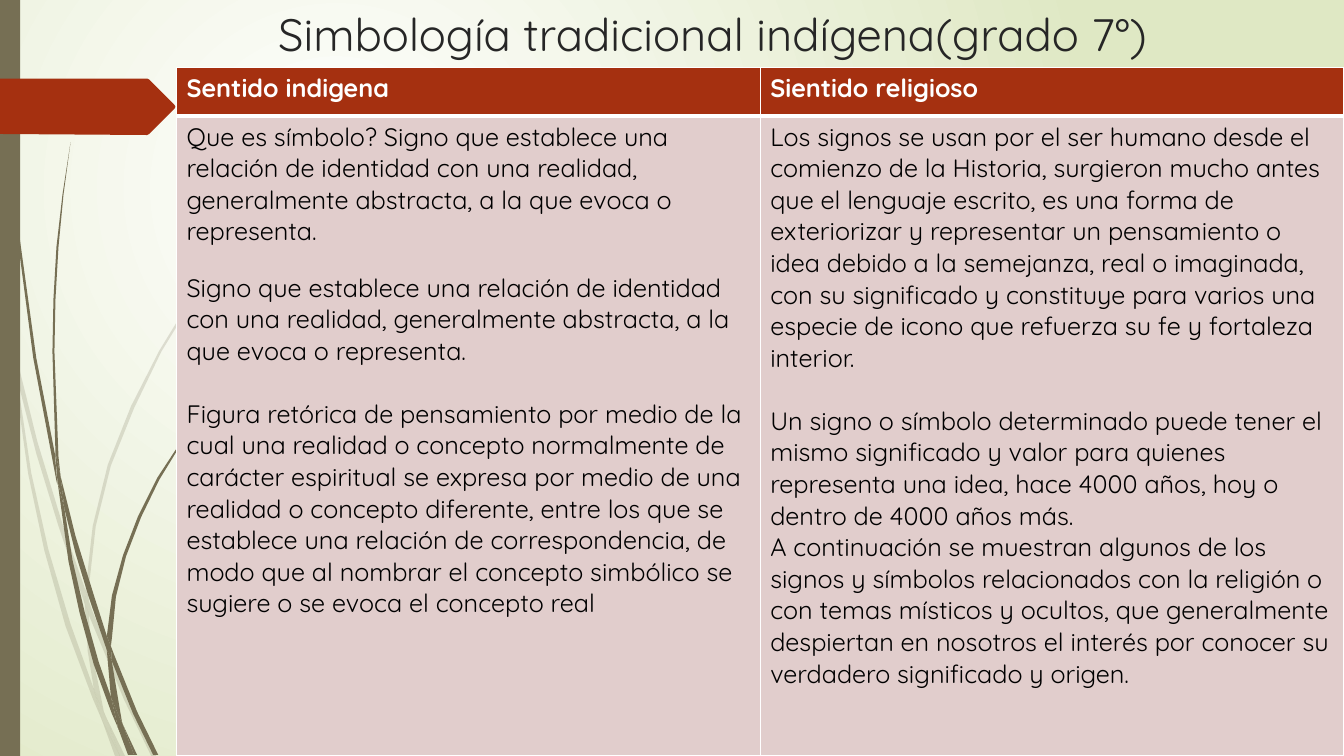
import pptx
import pptx.dml.color
import pptx.enum.shapes
import pptx.enum.text
import pptx.oxml
import pptx.oxml.ns
import pptx.util
from dataclasses import dataclass
from lxml import etree
from pptx.util import Inches


@dataclass(frozen=True)
class Theme:
    font: str = "Quicksand"
    title_size: float = 32.4
    body_size: float = 18
    white: str = "FFFFFF"
    black: str = "000000"
    title_color: str = "262626"
    background_edge: str = "DFE8C4"
    grass: str = "766F54"
    accent: str = "A53010"
    cell: str = "E1CDCC"


# Outlines in inches, one list of corner points per piece of a blade.
PALE_GRASS = [
    [(0.11, 3.5), (0.09, 3.22), (0, 2.82), (0, 2.99), (0.1, 3.44)],
    [(0.58, 5.22), (0.84, 5.99), (0.85, 5.86), (0.62, 5.2), (0.37, 4.38), (0.14, 3.45),
     (0.17, 3.76), (0.36, 4.5)],
    [(0.92, 6.07), (0.88, 5.96), (0.88, 6.1), (1.23, 6.94), (1.5, 7.5), (1.55, 7.5), (1.27, 6.92)],
    [(1.19, 7.5), (1.24, 7.5), (1.05, 7.11)],
    [(0.93, 6.83), (0.7, 6.19), (0.48, 5.45), (0.31, 4.69), (0.17, 3.76), (0.11, 3.5),
     (0.28, 4.7), (0.44, 5.46), (0.65, 6.21), (0.92, 6.93), (1.01, 7.14), (0.99, 7.07)],
    [(0.84, 5.99), (0.87, 6.46), (0.93, 6.83), (0.96, 6.92), (1.05, 7.11), (1.03, 7.06),
     (0.91, 6.46), (0.88, 6.1), (0.88, 6.08)],
    [(0.88, 5.84), (0.95, 5.22), (1.1, 4.62), (1.33, 4.05), (1.6, 3.49), (1.93, 2.95),
     (2.29, 2.45), (2.68, 1.98), (2.9, 1.75), (3.12, 1.54), (3.12, 1.53), (2.89, 1.75),
     (2.68, 1.97), (2.28, 2.44), (1.91, 2.94), (1.58, 3.48), (1.3, 4.03), (1.07, 4.61),
     (0.92, 5.22), (0.85, 5.84), (0.85, 5.86), (0.88, 5.96)],
    [(1.01, 7.14), (1.14, 7.5), (1.19, 7.5)],
    [(0.88, 6.08), (0.88, 6.1), (0.88, 5.96), (0.85, 5.86), (0.84, 5.99)],
    [(0.96, 6.92), (0.93, 6.83), (0.99, 7.07), (1.01, 7.14), (1.19, 7.5), (1.05, 7.11)],
]
DARK_GRASS = [
    [(0.07, 1.1), (0.17, 2.33), (0.33, 3.55), (0.56, 4.77), (0.57, 4.81), (0.55, 4.57),
     (0.55, 4.53), (0.36, 3.55), (0.19, 2.32), (0.08, 1.09), (0.05, 0.48), (0.04, 0),
     (0.03, 0), (0.04, 0.48)],
    [(0.88, 5.92), (1.06, 6.45), (1.06, 6.31), (0.93, 5.9), (0.75, 5.32), (0.6, 4.72),
     (0.64, 5.05), (0.75, 5.49)],
    [(1.13, 6.49), (1.1, 6.41), (1.11, 6.56), (1.32, 7.08), (1.52, 7.49), (1.57, 7.49),
     (1.36, 7.06)],
    [(1.1, 6.91), (0.98, 6.57), (0.84, 6.07), (0.72, 5.56), (0.64, 5.05), (0.57, 4.77),
     (0.68, 5.57), (0.79, 6.08), (0.93, 6.59), (1.11, 7.08), (1.17, 7.22), (1.16, 7.17)],
    [(0.6, 4.72), (0.58, 4.53), (0.54, 3.49), (0.55, 2.97), (0.58, 2.45), (0.63, 1.93),
     (0.7, 1.41), (0.62, 1.93), (0.56, 2.45), (0.53, 2.97), (0.52, 3.49), (0.55, 4.49)],
    [(1.33, 7.49), (1.36, 7.49), (1.22, 7.19)],
    [(0.57, 4.77), (0.64, 5.05), (0.6, 4.72), (0.55, 4.49), (0.55, 4.53)],
    [(1.11, 6.33), (1.15, 5.92), (1.25, 5.52), (1.4, 5.13), (1.58, 4.76), (1.8, 4.4),
     (2.05, 4.06), (2.31, 3.74), (2.45, 3.59), (2.61, 3.44), (2.6, 3.44), (2.45, 3.58),
     (2.31, 3.73), (2.04, 4.05), (1.79, 4.39), (1.56, 4.74), (1.37, 5.12), (1.22, 5.51),
     (1.11, 5.91), (1.06, 6.31), (1.1, 6.41)],
    [(1.17, 7.22), (1.27, 7.49), (1.31, 7.49)],
    [(1.06, 6.45), (1.1, 6.91), (1.16, 7.06), (1.22, 7.19), (1.21, 7.16), (1.11, 6.56),
     (1.09, 6.51)],
    [(1.06, 6.45), (1.09, 6.51), (1.11, 6.56), (1.1, 6.41), (1.06, 6.31)],
    [(1.16, 7.06), (1.1, 6.91), (1.16, 7.17), (1.17, 7.22), (1.3, 7.49), (1.33, 7.49),
     (1.22, 7.19)],
]
RED_ARROW = [(0, 0.78), (1.46, 0.78), (1.48, 0.79), (1.73, 1.04), (1.74, 1.06), (1.73, 1.08),
             (1.48, 1.33), (1.46, 1.34), (0, 1.33)]

# Each column: heading, then body paragraphs with the space before them in points.
COLUMNS = [
    ("Sentido indigena", [
        ("Que es símbolo? Signo que establece una relación de identidad con una realidad, "
         "generalmente abstracta, a la que evoca o representa.", 0),
        ("Signo que establece una relación de identidad con una realidad, generalmente "
         "abstracta, a la que evoca o representa.", 17.5),
        ("Figura retórica de pensamiento por medio de la cual una realidad o concepto "
         "normalmente de carácter espiritual se expresa por medio de una realidad o concepto "
         "diferente, entre los que se establece una relación de correspondencia, de modo que al "
         "nombrar el concepto simbólico se sugiere o se evoca el concepto real", 22.5),
    ]),
    ("Sientido religioso", [
        ("Los signos se usan por el ser humano desde el comienzo de la Historia, surgieron mucho "
         "antes que el lenguaje escrito, es una forma de exteriorizar y representar un "
         "pensamiento o idea debido a la semejanza, real o imaginada, con su significado y "
         "constituye para varios una especie de icono que refuerza su fe y fortaleza interior.", 0),
        ("Un signo o símbolo determinado puede tener el mismo significado y valor para quienes "
         "representa una idea, hace 4000 años, hoy o dentro de 4000 años más.", 22.5),
        ("A continuación se muestran algunos de los signos y símbolos relacionados con la "
         "religión o con temas místicos y ocultos, que generalmente despiertan en nosotros el "
         "interés por conocer su verdadero significado y origen.", 0),
    ]),
]


class SlideBuilder:
    def __init__(self, slide, theme):
        self.slide = slide
        self.theme = theme

    def paint(self, fill, color):
        fill.solid()
        fill.fore_color.rgb = pptx.dml.color.RGBColor.from_string(color)

    def background(self, center_color, edge_color):
        """Fill the background with a circular gradient centred up and left."""
        fill = self.slide.background.fill
        fill.gradient()
        for stop, color, position in zip(fill.gradient_stops, (center_color, edge_color), (0, 1)):
            stop.color.rgb = pptx.dml.color.RGBColor.from_string(color)
            stop.position = position
        linear = self.slide.element.find(".//" + pptx.oxml.ns.qn("a:lin"))
        circle = etree.Element(pptx.oxml.ns.qn("a:path"), {"path": "circle"})
        etree.SubElement(circle, pptx.oxml.ns.qn("a:fillToRect"),
                         l="50000", t="50000", r="100000", b="100000")
        linear.getparent().replace(linear, circle)

    def finish(self, shape, color, opacity):
        shape.shadow.inherit = False
        shape.line.fill.background()
        self.paint(shape.fill, color)
        if opacity < 100:
            color_element = shape.element.spPr.find(".//" + pptx.oxml.ns.qn("a:srgbClr"))
            etree.SubElement(color_element, pptx.oxml.ns.qn("a:alpha"), val=str(opacity * 1000))

    def outline(self, points, color, opacity=100):
        start, *others = [(Inches(x), Inches(y)) for x, y in points]
        builder = self.slide.shapes.build_freeform(*start)
        builder.add_line_segments(others)
        self.finish(builder.convert_to_shape(), color, opacity)

    def rectangle(self, left, top, width, height, color):
        shape = self.slide.shapes.add_shape(
            pptx.enum.shapes.MSO_SHAPE.RECTANGLE,
            Inches(left), Inches(top), Inches(width), Inches(height))
        self.finish(shape, color, 100)

    def set_text(self, paragraph, text, size, color, bold=False):
        paragraph.text = text
        for run in paragraph.runs:
            run.font.name = self.theme.font
            run.font.size = pptx.util.Pt(size)
            run.font.bold = bold
            run.font.color.rgb = pptx.dml.color.RGBColor.from_string(color)

    def title(self, text, left, top, width, height):
        box = self.slide.shapes.add_textbox(
            Inches(left), Inches(top), Inches(width), Inches(height))
        box.text_frame.word_wrap = True
        box.text_frame.vertical_anchor = pptx.enum.text.MSO_ANCHOR.MIDDLE
        self.set_text(box.text_frame.paragraphs[0], text,
                      self.theme.title_size, self.theme.title_color)

    def cell(self, cell, paragraphs, fill, color, bold, top_border, bottom_border):
        properties = cell._tc.get_or_add_tcPr()
        for side, width in (("L", 1), ("R", 1), ("T", top_border), ("B", bottom_border)):
            properties.append(pptx.oxml.parse_xml(
                f'<a:ln{side} {pptx.oxml.ns.nsdecls("a")} w="{width * 12700}"><a:solidFill>'
                f'<a:srgbClr val="{self.theme.white}"/></a:solidFill></a:ln{side}>'))
        self.paint(cell.fill, fill)
        frame = cell.text_frame
        for index, (text, space) in enumerate(paragraphs):
            paragraph = frame.add_paragraph() if index else frame.paragraphs[0]
            paragraph.space_before = pptx.util.Pt(space)
            self.set_text(paragraph, text, self.theme.body_size, color, bold)

    def table(self, columns, left, top, column_width, row_heights):
        table = self.slide.shapes.add_table(
            2, len(columns), Inches(left), Inches(top),
            Inches(column_width * len(columns)), Inches(sum(row_heights))).table
        table.horz_banding = False
        for row, height in zip(table.rows, row_heights):
            row.height = Inches(height)
        theme = self.theme
        for index, (heading, body) in enumerate(columns):
            table.columns[index].width = Inches(column_width)
            self.cell(table.cell(0, index), [(heading, 0)], theme.accent, theme.white, True, 1, 3)
            self.cell(table.cell(1, index), body, theme.cell, theme.black, False, 3, 1)


def main():
    presentation = pptx.Presentation()
    presentation.slide_width, presentation.slide_height = Inches(13.33), Inches(7.5)
    theme = Theme()
    builder = SlideBuilder(presentation.slides.add_slide(presentation.slide_layouts[6]), theme)
    builder.background(theme.white, theme.background_edge)
    for blades, opacity in ((PALE_GRASS, 20), (DARK_GRASS, 100)):
        for blade in blades:
            builder.outline(blade, theme.grass, opacity)
    builder.rectangle(0, 0, 0.2, 7.5, theme.grass)
    builder.outline(RED_ARROW, theme.accent)
    builder.title("Simbología tradicional indígena(grado 7°)", 2.66, 0, 9.75, 0.67)
    builder.table(COLUMNS, 1.75, 0.67, 5.79, (0.48, 6.35))
    presentation.save("out.pptx")


if __name__ == "__main__":
    main()
